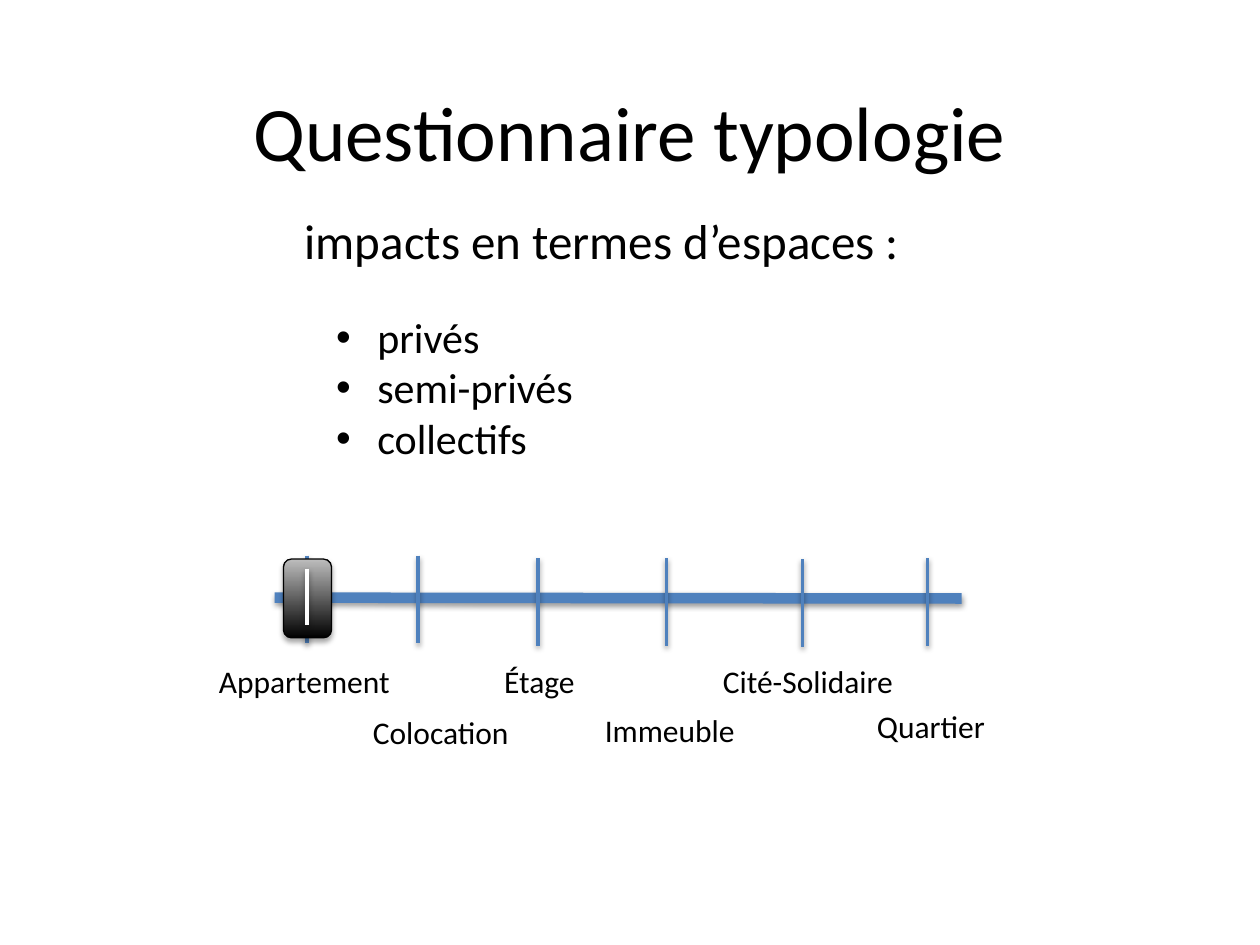
from dataclasses import dataclass

from lxml import etree
from pptx import Presentation
from pptx.dml.color import RGBColor
from pptx.enum.shapes import MSO_CONNECTOR, MSO_SHAPE
from pptx.enum.text import PP_ALIGN
from pptx.oxml.ns import qn
from pptx.util import Pt

STRAIGHT = MSO_CONNECTOR.STRAIGHT
ROUNDED = MSO_SHAPE.ROUNDED_RECTANGLE
LEFT, CENTER = PP_ALIGN.LEFT, PP_ALIGN.CENTER


@dataclass(frozen=True)
class Theme:
    """Colours, font and type sizes of the slide."""
    font: str = "Calibri"
    text: str = "000000"
    axis: str = "4F81BD"
    handle_dark: str = "000000"
    handle_light: str = "BDBDBD"
    grip: str = "FFFFFF"
    title_size: float = 44
    lead_size: float = 28
    bullet_size: float = 24
    label_size: float = 18


THEME = Theme()
TICKS = [(175.5, 317.5), (239, 317.5), (307.5, 319),
         (381, 319), (458.5, 319.5), (530, 319)]
TICK_LENGTH = 50
LABELS = [("Appartement", 118, 375), ("Colocation", 206, 404),
          ("Étage", 281, 375), ("Immeuble", 338.5, 402.5),
          ("Cité-Solidaire", 406, 375), ("Quartier", 494, 400.5)]
SPACES = ["privés", "semi-privés", "collectifs"]


def color(value):
    """Turn a hex string into a colour."""
    return RGBColor.from_string(value)


def add_shadow(shape, opacity, distance):
    """Give a shape a soft shadow that falls straight down."""
    properties = shape._element.spPr
    effects = etree.SubElement(properties, qn("a:effectLst"))
    shadow = etree.SubElement(
        effects, qn("a:outerShdw"), blurRad=str(Pt(3.1)),
        dist=str(Pt(distance)), dir="5400000", rotWithShape="0")
    black = etree.SubElement(shadow, qn("a:srgbClr"), val="000000")
    etree.SubElement(black, qn("a:alpha"), val=str(opacity * 1000))


def add_line(shapes, start, end, line_color, width):
    """Draw a straight shadowed line between two points."""
    line = shapes.add_connector(STRAIGHT, *map(Pt, start + end))
    line.line.color.rgb = color(line_color)
    line.line.width = Pt(width)
    add_shadow(line, 38, 1.6)


def add_box(slide, left, top, width, height, inset_top=3.6):
    """Add an empty wrapping text box and return its text frame."""
    frame = slide.shapes.add_textbox(*map(Pt, (left, top, width, height))).text_frame
    frame.word_wrap = True
    frame.margin_top = Pt(inset_top)
    return frame


def write(paragraph, text, size, align=LEFT, space_before=0, bullet=False):
    """Write text into a paragraph with its format."""
    paragraph.alignment = align
    paragraph.space_before = Pt(space_before)
    run = paragraph.add_run()
    run.text = text
    run.font.name = THEME.font
    run.font.size = Pt(size)
    run.font.color.rgb = color(THEME.text)
    if bullet:
        properties = paragraph._p.get_or_add_pPr()
        properties.set("marL", str(Pt(41.5)))
        properties.set("indent", str(Pt(-23.5)))
        etree.SubElement(properties, qn("a:buFont"), typeface="Arial")
        etree.SubElement(properties, qn("a:buChar"), char="•")


def add_handle(slide):
    """Draw the slider handle with its grip line as one group."""
    shapes = slide.shapes.add_group_shape().shapes
    handle = shapes.add_shape(ROUNDED, *map(Pt, (162, 319.5, 27.5, 45)))
    handle.fill.gradient()
    handle.fill.gradient_angle = 90
    stops = handle.fill.gradient_stops
    for stop, position, value in zip(stops, (0, 1), (THEME.handle_dark, THEME.handle_light)):
        stop.position = position
        stop.color.rgb = color(value)
    handle.line.color.rgb = color(THEME.text)
    handle.line.width = Pt(0.75)
    add_shadow(handle, 35, 1.8)
    add_line(shapes, (175.5, 325), (175.5, 357), THEME.grip, 2)


def add_scale(slide):
    """Draw the axis, its ticks, the handle and the labels."""
    add_line(slide.shapes, (157, 341.5), (549.5, 342), THEME.axis, 6)
    for x, top in TICKS:
        add_line(slide.shapes, (x, top), (x, top + TICK_LENGTH), THEME.axis, 2)
    add_handle(slide)
    for text, left, top in LABELS:
        frame = add_box(slide, left, top, 114, 29)
        write(frame.paragraphs[0], text, THEME.label_size)


def add_impacts(slide):
    """Write the lead sentence and the bulleted kinds of space."""
    frame = add_box(slide, 167, 116.5, 392, 152.5)
    write(frame.paragraphs[0], "impacts en termes d’espaces :", THEME.lead_size)
    for index, text in enumerate(SPACES):
        write(frame.add_paragraph(), text, THEME.bullet_size,
              space_before=0 if index else 24.4, bullet=True)


def main():
    """Build the slide and save it."""
    presentation = Presentation()
    presentation.slide_width, presentation.slide_height = Pt(720), Pt(540)
    slide = presentation.slides.add_slide(presentation.slide_layouts[6])
    title = add_box(slide, 36, 42, 648, 60, inset_top=6.5)
    write(title.paragraphs[0], "Questionnaire typologie", THEME.title_size, align=CENTER)
    add_scale(slide)
    add_impacts(slide)
    presentation.save("out.pptx")


if __name__ == "__main__":
    main()
